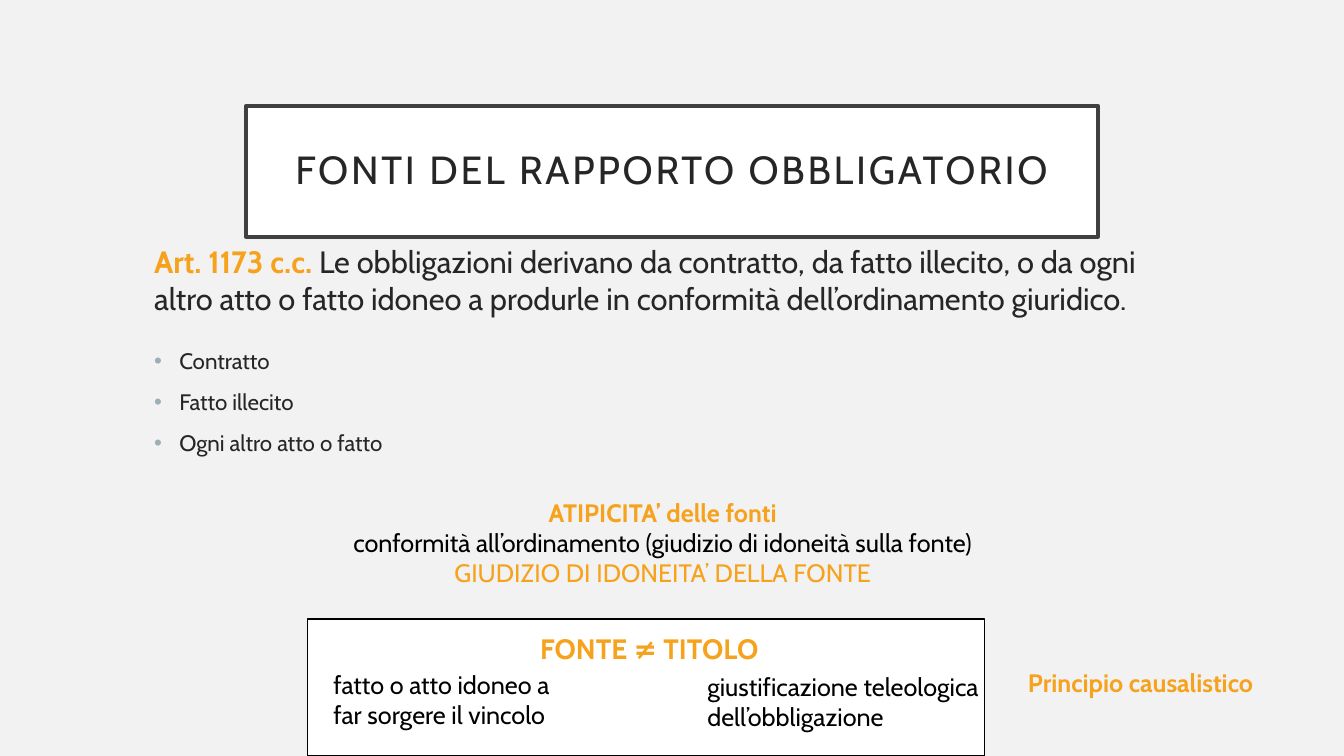
import pptx
import pptx.util
import pptx.dml.color
import pptx.enum.shapes
import pptx.enum.text
import pptx.oxml.ns
import lxml.etree

Pt = pptx.util.Pt
RGB = pptx.dml.color.RGBColor
ALIGN = pptx.enum.text.PP_ALIGN
ANCHOR = pptx.enum.text.MSO_ANCHOR

PAPER = RGB(0xF2, 0xF2, 0xF2)
WHITE = RGB(0xFF, 0xFF, 0xFF)
BLACK = RGB(0, 0, 0)
DARK = RGB(0x26, 0x26, 0x26)
FRAME = RGB(0x40, 0x40, 0x40)
GOLD = RGB(0xF6, 0xA2, 0x1D)
BULLET = "9BAFB5"
FONT = "Cabin"


def style(font, size, color, bold=False):
    font.name = FONT
    font.size = Pt(size)
    font.bold = bold
    font.color.rgb = color


def add_panel(slide, area, line, width):
    """Add a white rectangle with a plain outline."""
    rect = pptx.enum.shapes.MSO_SHAPE.RECTANGLE
    panel = slide.shapes.add_shape(rect, *map(Pt, area))
    panel.shadow.inherit = False
    panel.fill.solid()
    panel.fill.fore_color.rgb = WHITE
    panel.line.color.rgb = line
    panel.line.width = Pt(width)
    return panel


def add_frame(slide, area):
    frame = slide.shapes.add_textbox(*map(Pt, area)).text_frame
    frame.word_wrap = True
    return frame


def add_lines(slide, area, lines, size=18, align=ALIGN.LEFT):
    """Add a text box; each line is (text, color, bold)."""
    frame = add_frame(slide, area)
    for index, (text, color, bold) in enumerate(lines):
        para = frame.add_paragraph() if index else frame.paragraphs[0]
        para.text = text
        para.alignment = align
        style(para.font, size, color, bold)


def add_bullet(para, indent):
    props = para._p.get_or_add_pPr()
    props.set("marL", str(Pt(indent)))
    props.set("indent", str(-Pt(indent)))
    qn = pptx.oxml.ns.qn
    tint = lxml.etree.SubElement(props, qn("a:buClr"))
    lxml.etree.SubElement(tint, qn("a:srgbClr"), val=BULLET)
    lxml.etree.SubElement(props, qn("a:buFont"), typeface="Arial")
    lxml.etree.SubElement(props, qn("a:buChar"), char="•")


def add_title(slide, area, text):
    frame = add_panel(slide, area, FRAME, 2.5).text_frame
    frame.word_wrap = True
    frame.vertical_anchor = ANCHOR.MIDDLE
    frame.margin_left = frame.margin_right = Pt(14.4)
    frame.margin_top = frame.margin_bottom = Pt(14.4)
    para = frame.paragraphs[0]
    para.alignment = ALIGN.CENTER
    para.line_spacing = 0.9
    run = para.add_run()
    run.text = text
    style(run.font, 28, DARK)
    run._r.get_or_add_rPr().set("spc", "200")


def add_body(slide, area, label, rule, items):
    """Add the article with its gold label, then the bulleted items."""
    frame = add_frame(slide, area)
    para = frame.paragraphs[0]
    para.space_after = Pt(12)
    for text, color, bold in ((label, GOLD, True), (rule, DARK, False)):
        run = para.add_run()
        run.text = text
        style(run.font, 22, color, bold)
    for item in items:
        para = frame.add_paragraph()
        para.text = item
        para.space_before = Pt(10)
        add_bullet(para, 18)
        style(para.font, 16, DARK)


def main():
    deck = pptx.Presentation()
    deck.slide_width = Pt(960)
    deck.slide_height = Pt(540)
    slide = deck.slides.add_slide(deck.slide_layouts[6])
    slide.background.fill.solid()
    slide.background.fill.fore_color.rgb = PAPER

    add_title(slide, (175.7, 75.6, 608.6, 93.6),
              "FONTI DEL RAPPORTO OBBLIGATORIO")
    add_body(slide, (103, 170, 741, 188), "Art. 1173 c.c. ",
             "Le obbligazioni derivano da contratto, da fatto illecito, "
             "o da ogni altro atto o fatto idoneo a produrle in conformità "
             "dell’ordinamento giuridico.",
             ("Contratto", "Fatto illecito", "Ogni altro atto o fatto"))
    add_lines(slide, (727.2, 473, 212.4, 29),
              [("Principio causalistico", GOLD, True)])
    add_lines(slide, (131, 351.4, 684.7, 72.7), [
        ("ATIPICITA’ delle fonti", GOLD, True),
        ("conformità all’ordinamento (giudizio di idoneità sulla fonte)",
         BLACK, False),
        ("GIUDIZIO DI IDONEITA’ DELLA FONTE", GOLD, False),
    ], align=ALIGN.CENTER)

    add_panel(slide, (219.6, 442, 483.8, 98), BLACK, 1)
    add_lines(slide, (231.1, 474.5, 177.1, 51),
              [("fatto o atto idoneo a far sorgere il vincolo", BLACK, False)])
    add_lines(slide, (378.7, 447.8, 190, 53.3),
              [("FONTE ≠ TITOLO", GOLD, True)], size=20)
    add_lines(slide, (498.2, 476, 211, 51),
              [("giustificazione teleologica dell’obbligazione",
                BLACK, False)])
    deck.save("out.pptx")


if __name__ == "__main__":
    main()
